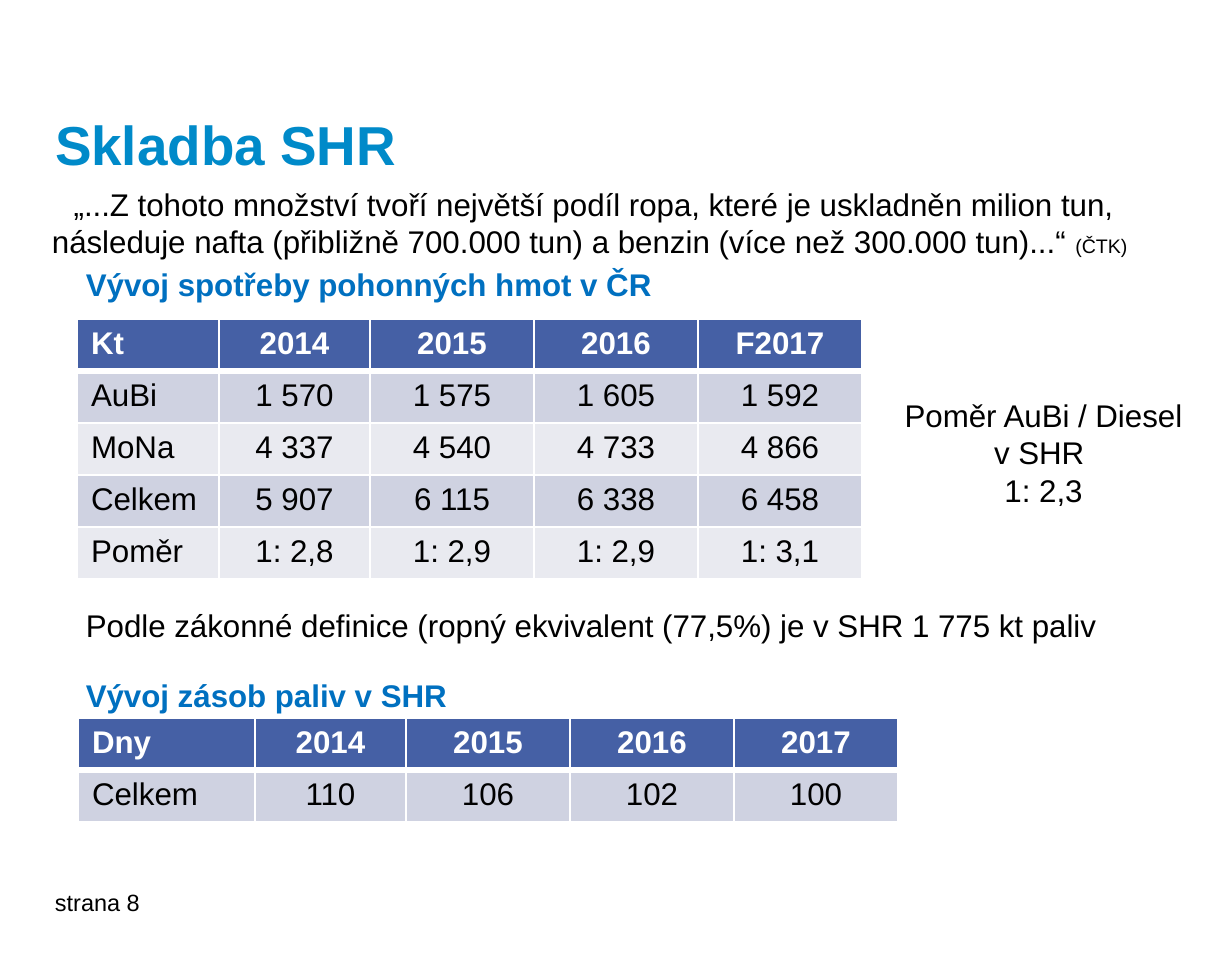
from dataclasses import dataclass

from lxml.etree import SubElement
from pptx import Presentation
from pptx.dml.color import RGBColor
from pptx.enum.text import MSO_ANCHOR, MSO_AUTO_SIZE, PP_ALIGN
from pptx.oxml.ns import qn
from pptx.util import Emu, Pt

SCALE = 914400 / 141
BLACK, WHITE, BLUE, SKY = "000000", "FFFFFF", "0070C0", "008AC9"
HEAD, BANDS = "4560A5", ("CFD2E1", "E9EAF0")
LEFT, MID = PP_ALIGN.LEFT, PP_ALIGN.CENTER
ROW = 52
YEARS = [151, 164, 164, 164]


@dataclass
class Run:
    text: str
    size: int = 16
    color: str = BLACK
    bold: bool = False


@dataclass
class Note:
    box: tuple[int, int, int, int]
    lines: list[list[Run]]
    align: PP_ALIGN = LEFT
    wrap: bool = True
    inset: bool = True


@dataclass
class Grid:
    left: int
    top: int
    first: int
    rows: list[list[str]]


def px(n: float) -> Emu:
    return Emu(round(n * SCALE))


def rgb(code: str) -> RGBColor:
    return RGBColor.from_string(code)


def write(para, runs: list[Run], align: PP_ALIGN) -> None:
    para.alignment = align
    for item in runs:
        run = para.add_run()
        run.text = item.text
        form = {"name": "Arial", "size": Pt(item.size), "bold": item.bold}
        for key, value in form.items():
            setattr(run.font, key, value)
        run.font.color.rgb = rgb(item.color)


def place(shape, box: tuple[int, int, int, int]) -> None:
    for key, value in zip(("left", "top", "width", "height"), box):
        setattr(shape, key, px(value))


def strip(frame) -> None:
    for side in ("left", "top", "right", "bottom"):
        setattr(frame, f"margin_{side}", 0)


def add_note(slide, note: Note) -> None:
    frame = slide.shapes.add_textbox(*map(px, note.box)).text_frame
    frame.word_wrap = note.wrap
    if not note.inset:
        strip(frame)
    for i, runs in enumerate(note.lines):
        para = frame.add_paragraph() if i else frame.paragraphs[0]
        write(para, runs, note.align)


def edge(cell, widths: dict[str, int]) -> None:
    props = cell._tc.get_or_add_tcPr()
    for side, width in widths.items():
        line = SubElement(props, qn(f"a:ln{side}"), w=str(Pt(width)))
        fill = SubElement(line, qn("a:solidFill"))
        SubElement(fill, qn("a:srgbClr"), val=WHITE)


def add_grid(slide, grid: Grid) -> None:
    wide = [grid.first, *YEARS]
    size = (sum(wide), ROW * len(grid.rows))
    table = slide.shapes.add_table(
        len(grid.rows), len(wide), *map(px, (grid.left, grid.top, *size))
    ).table
    for col, width in zip(table.columns, wide):
        col.width = px(width)
    for r, row in enumerate(grid.rows):
        table.rows[r].height = px(ROW)
        top = r == 0
        for c, text in enumerate(row):
            cell = table.cell(r, c)
            # A thick rule parts the header from the body
            edge(cell, {"L": 1, "R": 1, "T": 3 if r == 1 else 1, "B": 3 if top else 1})
            cell.fill.solid()
            cell.fill.fore_color.rgb = rgb(HEAD if top else BANDS[(r - 1) % 2])
            run = Run(text, color=WHITE if top else BLACK, bold=top)
            write(cell.text_frame.paragraphs[0], [run], MID if c else LEFT)


NOTES = [
    Note((55, 888, 288, 66), [[Run("strana 8", 12)]], inset=False),
    Note((28, 178, 1132, 90), [[
        Run("„...Z tohoto množství tvoří největší podíl ropa, které je uskladněn "
            "milion tun, následuje nafta (přibližně 700.000 tun) a benzin "
            "(více než 300.000 tun)...“ "),
        Run("(ČTK)", 10),
        Run(" "),
    ]], MID),
    Note((72, 599, 1052, 52), [[
        Run("Podle zákonné definice (ropný ekvivalent (77,5%) je v SHR 1 775 kt paliv")
    ]], wrap=False),
    Note((883, 389, 321, 128), [
        [Run("Poměr AuBi / Diesel v SHR ")], [Run("1: 2,3")]
    ], MID),
    Note((72, 258, 601, 52), [[
        Run("Vývoj spotřeby pohonných hmot v ČR", color=BLUE, bold=True)
    ]], wrap=False),
    Note((72, 669, 393, 52), [[
        Run("Vývoj zásob paliv v SHR", color=BLUE, bold=True)
    ]], wrap=False),
]

GRIDS = [
    Grid(77, 319, 142, [
        ["Kt", "2014", "2015", "2016", "F2017"],
        ["AuBi", "1 570", "1 575", "1 605", "1 592"],
        ["MoNa", "4 337", "4 540", "4 733", "4 866"],
        ["Celkem", "5 907", "6 115", "6 338", "6 458"],
        ["Poměr", "1: 2,8", "1: 2,9", "1: 2,9", "1: 3,1"],
    ]),
    Grid(78, 718, 177, [
        ["Dny", "2014", "2015", "2016", "2017"],
        ["Celkem", "110", "106", "102", "100"],
    ]),
]


def main() -> None:
    deck = Presentation()
    deck.slide_width, deck.slide_height = px(1232), px(955)
    slide = deck.slides.add_slide(deck.slide_layouts[5])

    # Title
    title = slide.shapes.title
    place(title, (55, 64, 804, 160))
    frame = title.text_frame
    strip(frame)
    form = {"auto_size": MSO_AUTO_SIZE.NONE, "vertical_anchor": MSO_ANCHOR.MIDDLE}
    for key, value in form.items():
        setattr(frame, key, value)
    write(frame.paragraphs[0], [Run("Skladba SHR", 28, SKY, True)], LEFT)

    # Tables and texts
    for grid in GRIDS:
        add_grid(slide, grid)
    for note in NOTES:
        add_note(slide, note)

    deck.save("out.pptx")


if __name__ == "__main__":
    main()
